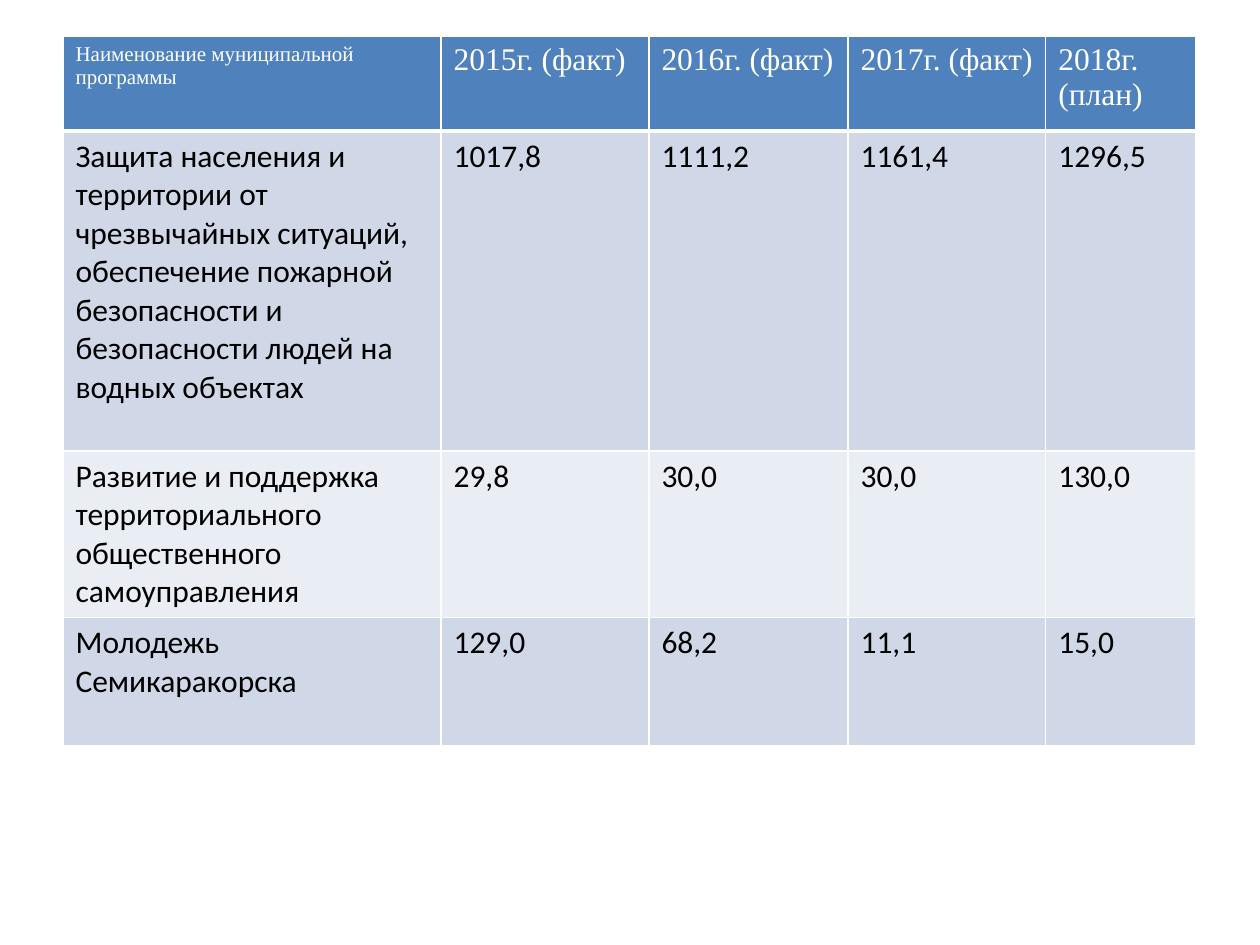
from lxml.etree import SubElement
from pptx import Presentation
from pptx.dml.color import RGBColor
from pptx.oxml.ns import qn
from pptx.util import Inches, Pt

WHITE = RGBColor(0xFF, 0xFF, 0xFF)
BLACK = RGBColor(0x00, 0x00, 0x00)
HEADER = RGBColor(0x4F, 0x81, 0xBD)
BANDS = RGBColor(0xD0, 0xD8, 0xE8), RGBColor(0xE9, 0xED, 0xF4)

COLUMN_WIDTHS = 3, 1.65, 1.58, 1.57, 1.19
ROW_HEIGHTS = 0.75, 2.54, 1.32, 1.02
PROGRAMMES = [
    ["Наименование муниципальной программы",
     "2015г. (факт)", "2016г. (факт)", "2017г. (факт)", "2018г. (план)"],
    ["Защита населения и территории от чрезвычайных ситуаций, обеспечение "
     "пожарной безопасности и безопасности людей на водных объектах",
     "1017,8", "1111,2", "1161,4", "1296,5"],
    ["Развитие и поддержка территориального общественного самоуправления",
     "29,8", "30,0", "30,0", "130,0"],
    ["Молодежь Семикаракорска", "129,0", "68,2", "11,1", "15,0"],
]


class SlideBuilder:
    header_font = {"name": "Times New Roman", "size": Pt(18), "bold": False}
    body_font = {"name": "Calibri", "size": Pt(18), "bold": False}

    def __init__(self, slide):
        self.s = slide

    def borders(self, cell, widths):
        tcPr = cell._tc.get_or_add_tcPr()
        for side, width in widths.items():
            ln = SubElement(tcPr, qn(f"a:ln{side}"), w=str(Pt(width)))
            fill = SubElement(ln, qn("a:solidFill"))
            SubElement(fill, qn("a:srgbClr"), val=str(WHITE))

    def cell(self, cell, text, fill, color, font):
        cell.fill.solid()
        cell.fill.fore_color.rgb = fill
        p = cell.text_frame.paragraphs[0]
        r = p.add_run()
        r.text = text
        for name, value in font.items():
            setattr(r.font, name, value)
        r.font.color.rgb = color

    def table(self, rows, left, top, widths, heights):
        frame = self.s.shapes.add_table(
            len(rows), len(widths), Inches(left), Inches(top),
            Inches(sum(widths)), Inches(sum(heights)))
        table = frame.table
        for column, width in zip(table.columns, widths):
            column.width = Inches(width)
        for row, height in zip(table.rows, heights):
            row.height = Inches(height)
        for i, texts in enumerate(rows):
            for j, text in enumerate(texts):
                cell = table.cell(i, j)
                self.borders(cell, {"L": 1, "R": 1, "T": 3 if i == 1 else 1,
                                    "B": 3 if i == 0 else 1})
                if i:
                    self.cell(cell, text, BANDS[(i - 1) % 2], BLACK, self.body_font)
                else:
                    size = Pt(18) if j else Pt(12)
                    self.cell(cell, text, HEADER, WHITE,
                              {**self.header_font, "size": size})


def main():
    prs = Presentation()
    prs.slide_width, prs.slide_height = Inches(10), Inches(7.5)
    builder = SlideBuilder(prs.slides.add_slide(prs.slide_layouts[6]))
    builder.table(PROGRAMMES, 0.5, 0.29, COLUMN_WIDTHS, ROW_HEIGHTS)
    prs.save("out.pptx")


if __name__ == "__main__":
    main()
